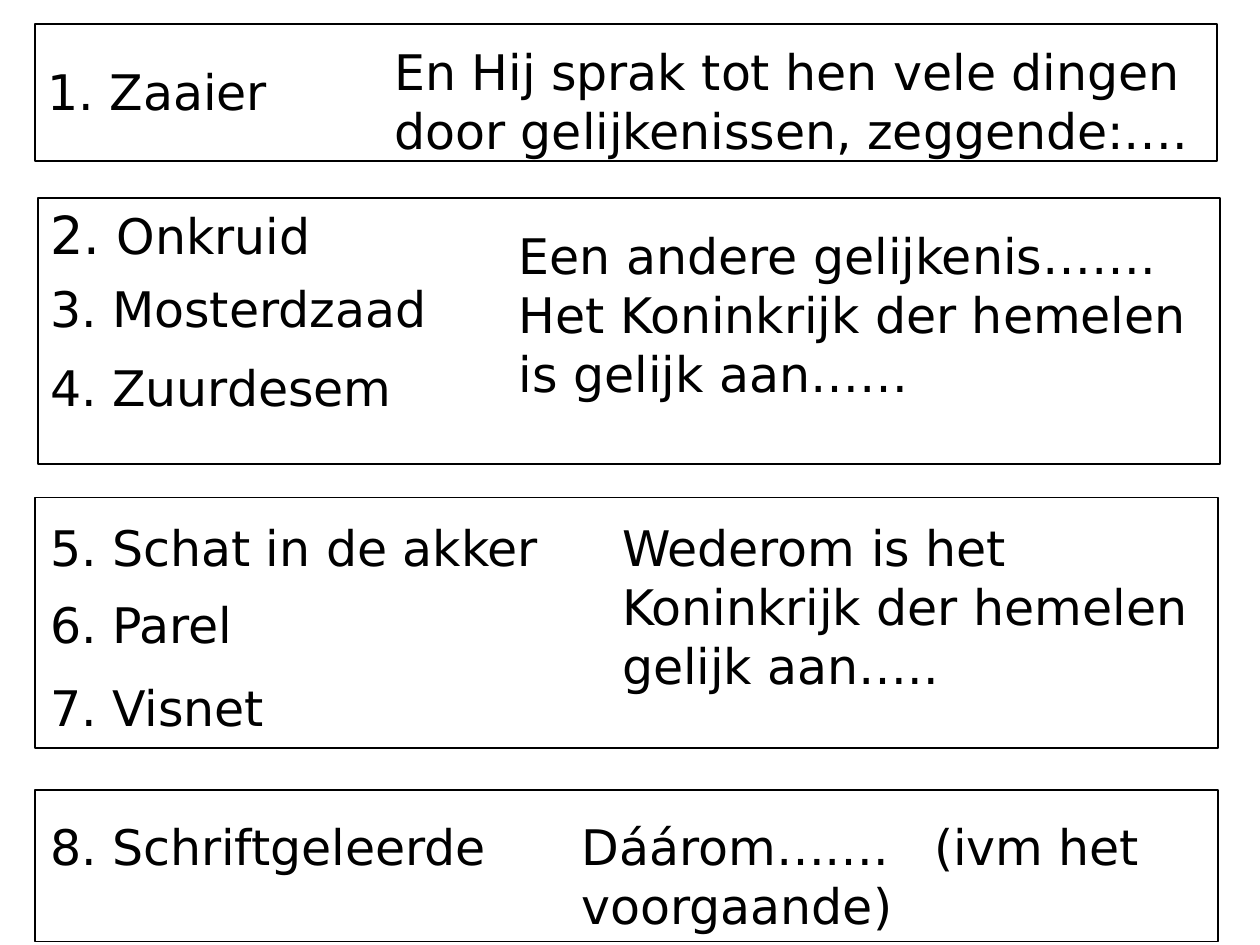
from lxml import etree
from pptx import Presentation
from pptx.dml.color import RGBColor
from pptx.enum.shapes import MSO_SHAPE
from pptx.enum.text import MSO_AUTO_SIZE
from pptx.oxml.ns import qn
from pptx.util import Cm, Pt

BLACK = RGBColor(0, 0, 0)
FONT = "DejaVu Sans"

parables = [
    ("1. Zaaier", 0.71, 1.12, 5.0, 1.45),
    ("2. Onkruid", 0.76, 3.94, 5.92, 1.55),
    ("3. Mosterdzaad", 0.76, 5.49, 8.2, 1.45),
    ("4. Zuurdesem", 0.76, 7.09, 7.52, 1.45),
    ("5. Schat in de akker", 0.76, 10.31, 10.67, 1.45),
    ("6. Parel", 0.76, 11.86, 4.32, 1.45),
    ("7. Visnet", 0.76, 13.54, 4.95, 1.45),
    ("8. Schriftgeleerde", 0.76, 16.33, 9.45, 1.45),
]
openings = [
    ("En Hij sprak tot hen vele dingen door gelijkenissen, zeggende:….", 7.7, 0.71, 16.84, 2.64),
    ("Een andere gelijkenis…….\nHet Koninkrijk der hemelen is gelijk aan……", 10.21, 4.42, 14.2, 3.84),
    ("Wederom is het Koninkrijk der hemelen gelijk aan…..", 12.29, 10.31, 12.62, 3.84),
    ("Dáárom…….\t(ivm het voorgaande)", 11.48, 16.33, 13.44, 2.64),
]
frames = [
    (0.71, 10.03, 23.85, 5.05),
    (0.71, 15.93, 23.85, 3.05),
    (0.76, 3.99, 23.83, 5.36),
    (0.71, 0.48, 23.83, 2.77),
]


def add_text(slide, wording, bounds, wraps):
    box = slide.shapes.add_textbox(*map(Cm, bounds))
    box.text_frame.text = wording
    box.text_frame.word_wrap = wraps
    box.text_frame.auto_size = MSO_AUTO_SIZE.SHAPE_TO_FIT_TEXT
    for paragraph in box.text_frame.paragraphs:
        for run in paragraph.runs:
            run.font.name = FONT
            run.font.size = Pt(28)
            run.font.color.rgb = BLACK
    return box.text_frame.paragraphs[0]


prs = Presentation()
prs.slide_width = Cm(25.4)
prs.slide_height = Cm(19.05)
slide = prs.slides.add_slide(prs.slide_layouts[6])

for wording, *bounds in parables:
    parable = add_text(slide, wording, bounds, False)
    if wording.startswith("2."):
        number = parable.runs[0]
        number.text = "2. "
        number.font.size = Pt(30)
        name = parable.add_run()
        name.text = "Onkruid"
        name.font.name = FONT
        name.font.size = Pt(28)
        name.font.color.rgb = BLACK

for wording, *bounds in openings:
    opening = add_text(slide, wording, bounds, True)
    if "\t" in wording:
        tab_stops = etree.SubElement(opening._p.get_or_add_pPr(), qn("a:tabLst"))
        etree.SubElement(tab_stops, qn("a:tab"), pos=str(Cm(7.1)), algn="l")

for bounds in frames:
    frame = slide.shapes.add_shape(MSO_SHAPE.RECTANGLE, *map(Cm, bounds))
    frame.shadow.inherit = False
    frame.fill.background()
    frame.line.color.rgb = BLACK
    frame.line.width = Pt(1)

prs.save("out.pptx")
